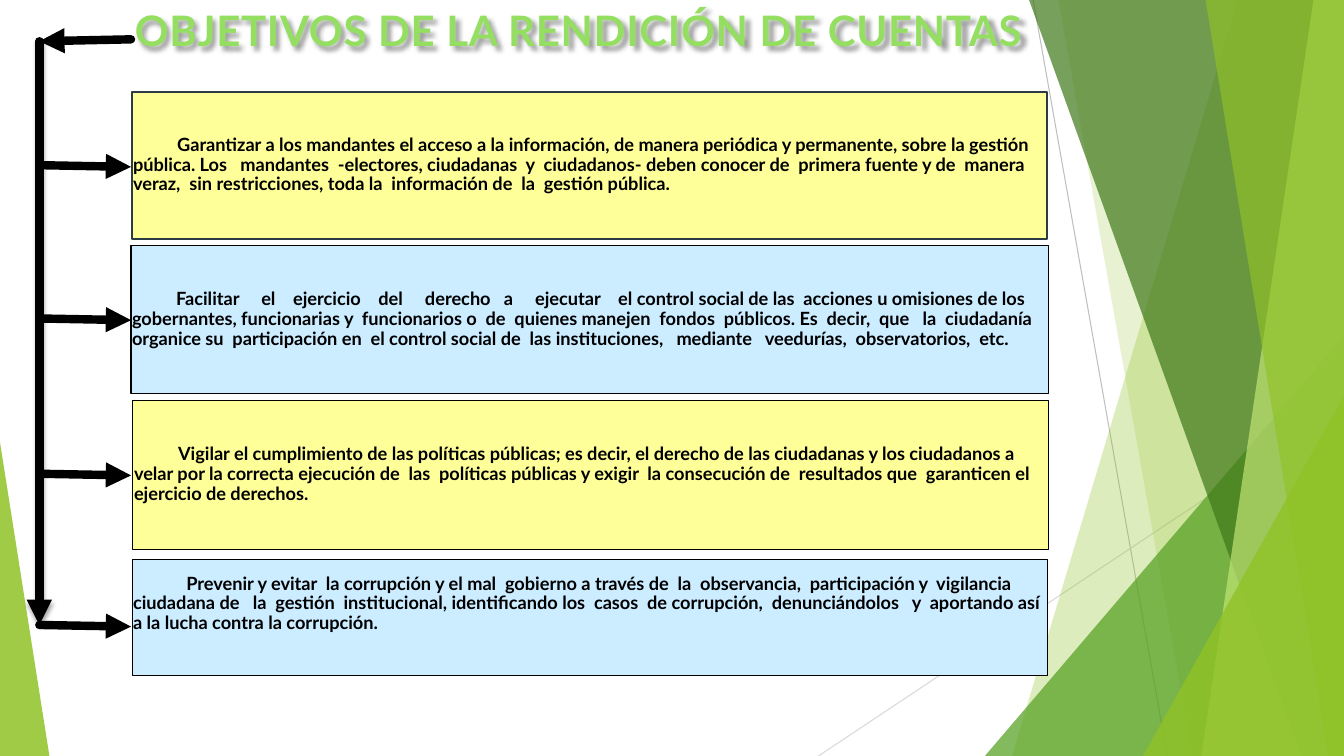
import pptx
import pptx.util
import pptx.dml.color
import pptx.enum.shapes
import pptx.enum.text
import pptx.oxml.ns
from dataclasses import dataclass
from lxml import etree

Pt = pptx.util.Pt
SHAPE = pptx.enum.shapes.MSO_SHAPE
ANCHOR = pptx.enum.text.MSO_ANCHOR
ALIGN = pptx.enum.text.PP_ALIGN
qn = pptx.oxml.ns.qn


@dataclass(frozen=True)
class Theme:
    font: str = "Lato"
    title_size: float = 30
    body_size: float = 13
    title: str = "94DE61"
    ink: str = "000000"
    border: str = "2C3C43"
    yellow: str = "FFFF99"
    blue: str = "CCECFF"
    lime: str = "90C226"
    green: str = "54A021"
    forest: str = "3F7819"
    pale: str = "C0E474"
    gray: str = "BFBFBF"
    light_gray: str = "D9D9D9"


THEME = Theme()

OBJECTIVES = [
    (94.3, 65.5, 653.8, 105.1, THEME.yellow, THEME.border, 1.5, 31.5, 0, 118,
     "Garantizar a los mandantes el acceso a la información, de manera periódica y permanente, "
     "sobre la gestión pública. Los   mandantes  -electores, ciudadanas  y  ciudadanos- deben "
     "conocer de  primera fuente y de  manera veraz,  sin restricciones, toda la  información "
     "de  la  gestión pública."),
    (93.6, 175.7, 655.2, 105.1, THEME.blue, THEME.ink, 0.75, 31.5, 0, 227.5,
     "Facilitar     el    ejercicio    del     derecho   a     ejecutar    el control social "
     "de las  acciones u omisiones de los gobernantes, funcionarias y  funcionarios o  de  "
     "quienes manejen  fondos  públicos. Es  decir,  que   la  ciudadanía organice su  "
     "participación en  el control social de  las instituciones,   mediante   veedurías,  "
     "observatorios,  etc."),
    (95, 285.8, 653.8, 106.6, THEME.yellow, THEME.ink, 0.75, 31.5, 0, 338.4,
     "Vigilar el cumplimiento de las políticas públicas; es decir, el derecho de las ciudadanas "
     "y los ciudadanos a velar por la correcta ejecución de  las  políticas públicas y exigir  "
     "la consecución de  resultados que  garanticen el ejercicio de derechos."),
    (94.3, 399.6, 653.8, 82.8, THEME.blue, THEME.ink, 0.75, 38, 19, 446.4,
     "Prevenir y evitar  la corrupción y el mal  gobierno a través de  la  observancia,  "
     "participación y  vigilancia ciudadana de   la  gestión  institucional, identificando los  "
     "casos  de corrupción,  denunciándolos   y  aportando así  a la lucha contra la corrupción."),
]


def rgb(color):
    return pptx.dml.color.RGBColor.from_string(color)


def paint(sp, color, opacity=100):
    sp.shadow.inherit = False
    sp.fill.solid()
    sp.fill.fore_color.rgb = rgb(color)
    if opacity < 100:
        clr = sp.fill._xPr.find(qn("a:solidFill"))[0]
        etree.SubElement(clr, qn("a:alpha"), val=str(opacity * 1000))
    sp.line.fill.background()


def set_shadow(sp, blur, dist, angle, opacity):
    sp_pr = sp._element.spPr
    effects = sp_pr.find(qn("a:effectLst"))
    if effects is None:
        effects = etree.SubElement(sp_pr, qn("a:effectLst"))
    shadow = etree.SubElement(effects, qn("a:outerShdw"), blurRad=str(Pt(blur)),
                              dist=str(Pt(dist)), dir=str(angle * 60000), rotWithShape="0")
    clr = etree.SubElement(shadow, qn("a:srgbClr"), val=THEME.ink)
    etree.SubElement(clr, qn("a:alpha"), val=str(opacity * 1000))


def add_line(s, x1, y1, x2, y2, color, width):
    line = s.shapes.add_connector(pptx.enum.shapes.MSO_CONNECTOR.STRAIGHT,
                                  Pt(x1), Pt(y1), Pt(x2), Pt(y2))
    line.line.color.rgb = rgb(color)
    line.line.width = Pt(width)
    etree.SubElement(line._element.spPr, qn("a:effectLst"))
    return line


def add_arrow(s, x1, y1, x2, y2):
    arrow = add_line(s, x1, y1, x2, y2, THEME.ink, 6)
    ln = arrow.line._get_or_add_ln()
    ln.set("cap", "rnd")
    etree.SubElement(ln, qn("a:tailEnd"), type="triangle")
    return arrow


def add_band(s, right, bottom, top_x, bottom_x, color, opacity):
    fb = s.shapes.build_freeform(Pt(top_x), Pt(0))
    fb.add_line_segments([(Pt(right), Pt(0)), (Pt(right), Pt(bottom)), (Pt(bottom_x), Pt(bottom))])
    paint(fb.convert_to_shape(), color, opacity)


def add_wedge(s, x, y, w, h, peak, color, opacity):
    sp = s.shapes.add_shape(SHAPE.ISOSCELES_TRIANGLE, Pt(x), Pt(y), Pt(w), Pt(h))
    sp.adjustments[0] = peak
    paint(sp, color, opacity)


def add_backdrop(s, w, h):
    add_line(s, 738, 0, 833.8, h, THEME.gray, 0.75)
    add_line(s, w, 290.2, 584.6, h, THEME.light_gray, 0.75)
    add_band(s, w, h, 884.2, 722.9, THEME.lime, 30)
    add_band(s, w, h, 756, 851.8, THEME.lime, 20)
    add_wedge(s, w - 256.5, h - 300.2, 256.5, 300.2, 1, THEME.green, 72)
    add_band(s, w, h, 735.1, 929.5, THEME.forest, 70)
    add_band(s, w, h, 938.2, 858.2, THEME.pale, 70)
    add_band(s, w, h, 861.1, 949, THEME.lime, 65)
    add_wedge(s, w - 143.5, h - 257, 143.5, 257, 1, THEME.lime, 80)
    add_wedge(s, 0, h - 224, 35.3, 224, 0, THEME.lime, 85)


def set_text(sp, text, size, color, inset, align):
    tf = sp.text_frame
    tf.text = text
    tf.word_wrap = True
    tf.auto_size = pptx.enum.text.MSO_AUTO_SIZE.NONE
    tf.vertical_anchor = ANCHOR.MIDDLE
    tf.margin_left = tf.margin_right = tf.margin_top = tf.margin_bottom = Pt(inset)
    p = tf.paragraphs[0]
    p.alignment = align
    p.line_spacing = 0.9
    p.font.name = THEME.font
    p.font.size = Pt(size)
    p.font.bold = True
    p.font.color.rgb = rgb(color)
    return p


def add_title(s, x, y, w, h):
    title = s.shapes.title
    title.left, title.top, title.width, title.height = Pt(x), Pt(y), Pt(w), Pt(h)
    p = set_text(title, "OBJETIVOS DE LA RENDICIÓN DE CUENTAS", THEME.title_size,
                 THEME.title, 2, ALIGN.CENTER)
    p.runs[0].font._element.set("spc", "50")
    set_shadow(title, 3, 3, 50, 40)


def add_objective(s, x, y, w, h, fill, border, border_width, indent, lift, text):
    box = s.shapes.add_shape(SHAPE.RECTANGLE, Pt(x), Pt(y), Pt(w), Pt(h))
    paint(box, fill)
    box.line.color.rgb = rgb(border)
    box.line.width = Pt(border_width)
    p = set_text(box, text, THEME.body_size, THEME.ink, 0.75, ALIGN.LEFT)
    p._p.get_or_add_pPr().set("indent", str(Pt(indent)))
    box.text_frame.margin_bottom = Pt(0.75 + lift)


def add_arrows(s, x, y, w, levels):
    add_arrow(s, x + w, y - 1.4, x, y)
    for level in levels:
        add_arrow(s, x, level, x + w, level + 1.2)
    set_shadow(add_arrow(s, x, y, x, levels[-1]), 3, 2, 90, 35)


def main():
    prs = pptx.Presentation()
    prs.slide_width, prs.slide_height = Pt(960), Pt(540)
    s = prs.slides.add_slide(prs.slide_layouts[5])
    add_backdrop(s, 960, 540)
    add_title(s, 86.4, -1.4, 654.5, 50.4)
    for *box, level, text in OBJECTIVES:
        add_objective(s, *box, text)
    add_arrows(s, 28.1, 29.5, 65.5, [objective[-2] for objective in OBJECTIVES])
    prs.save("out.pptx")


if __name__ == "__main__":
    main()
